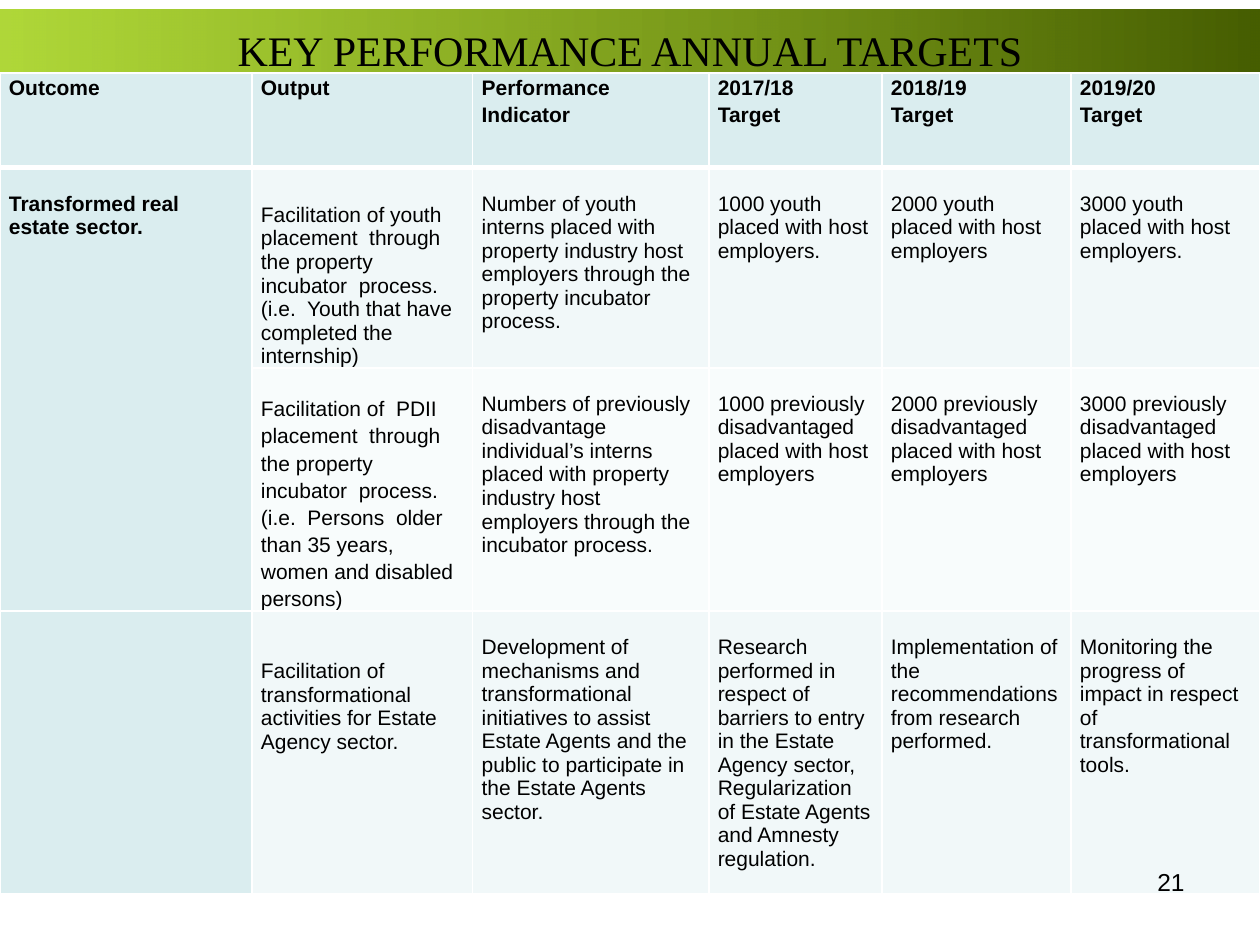
"""Build the slide of key performance annual targets."""
from dataclasses import dataclass

from lxml import etree
from pptx import Presentation
from pptx import util as u
from pptx.dml.color import RGBColor
from pptx.enum import text
from pptx.oxml import ns


@dataclass(frozen=True)
class Theme:
    ink: str = "000000"
    rule: str = "FFFFFF"
    heading: str = "DAEDEF"
    band: str = "F1F8F9"
    plain: str = "F8FCFC"
    banner_start: str = "99CC00"
    banner_end: str = "465E00"
    title_font: str = "Times New Roman"
    body_font: str = "Arial"
    title_size: int = 24
    body_size: int = 12
    number_size: int = 14


THEME = Theme()
COLUMN_WIDTHS = [5.08, 4.45, 4.76, 3.49, 3.81, 3.81]
ROW_HEIGHTS = [1.91, 4.01, 4.9, 5.69]
LINE_GAP = 0.49
HEADINGS = ["Outcome", "Output", "Performance Indicator",
            "2017/18\nTarget", "2018/19\nTarget", "2019/20\nTarget"]
OUTCOME = "Transformed real estate sector."
TARGETS = [
    ["Facilitation of youth placement  through the property  incubator  process."
     "(i.e.  Youth that have completed the internship)",
     "Number of youth interns placed with property industry host employers "
     "through the property incubator process.",
     "1000 youth placed with host employers.",
     "2000 youth placed with host employers",
     "3000 youth placed with host employers."],
    ["Facilitation of  PDII placement  through the property  incubator  process."
     "(i.e.  Persons  older than 35 years, women and disabled persons)",
     "Numbers of previously disadvantage individual’s interns placed with "
     "property industry host employers through the incubator process.",
     "1000 previously disadvantaged placed with host employers",
     "2000 previously disadvantaged placed with host employers",
     "3000 previously disadvantaged placed with host employers"],
    ["Facilitation of transformational activities for Estate Agency sector.",
     "Development of mechanisms and transformational initiatives to assist "
     "Estate Agents and the public to participate in the Estate Agents sector.",
     "Research performed in respect of barriers to entry in the Estate Agency "
     "sector, Regularization of Estate Agents and Amnesty regulation.",
     "Implementation of the recommendations from research performed.",
     "Monitoring the progress of impact in respect of transformational tools."],
]
OUTPUT_GAPS = [0.72, 0.53, 2 * LINE_GAP]
OUTPUT_SPACINGS = [1, 1.15, 1]
ROW_FILLS = [THEME.band, THEME.plain, THEME.band]


def add_run(paragraph, words, font, size, bold=False):
    """Add one styled run to a paragraph."""
    run = paragraph.add_run()
    run.text = words
    run.font.name = font
    run.font.size = u.Pt(size)
    run.font.bold = bold
    run.font.color.rgb = RGBColor.from_string(THEME.ink)


def add_title(slide, words):
    """Place the title on its gradient banner."""
    title = slide.shapes.title
    title.left, title.top = u.Cm(0), u.Cm(0.2)
    title.width, title.height = u.Cm(25.4), u.Cm(1.47)
    title.fill.gradient()
    title.fill.gradient_angle = 0
    colours = (THEME.banner_start, THEME.banner_end)
    for stop, colour in zip(title.fill.gradient_stops, colours):
        stop.color.rgb = RGBColor.from_string(colour)
    start = next(title.element.spPr.iter(ns.qn("a:srgbClr")))
    etree.SubElement(start, ns.qn("a:alpha"), val="78000")
    frame = title.text_frame
    frame.auto_size = text.MSO_AUTO_SIZE.NONE
    frame.vertical_anchor = text.MSO_ANCHOR.MIDDLE
    frame.margin_top = u.Cm(0.25)
    heading = frame.paragraphs[0]
    heading.alignment = text.PP_ALIGN.CENTER
    add_run(heading, words, THEME.title_font, THEME.title_size)


def style_cell(cell, colour, bottom=1):
    """Give a cell its borders and fill."""
    properties = cell._tc.get_or_add_tcPr()
    for side, points in (("L", 1), ("R", 1), ("T", 1), ("B", bottom)):
        border = etree.SubElement(properties, ns.qn(f"a:ln{side}"),
                                  w=str(u.Pt(points)))
        solid = etree.SubElement(border, ns.qn("a:solidFill"))
        etree.SubElement(solid, ns.qn("a:srgbClr"), val=THEME.rule)
    cell.fill.solid()
    cell.fill.fore_color.rgb = RGBColor.from_string(colour)


def write_cell(cell, words, gap=LINE_GAP, spacing=1, bold=False):
    """Write lines into a cell below a top gap."""
    cell.margin_left = cell.margin_right = u.Cm(0.18)
    cell.margin_top, cell.margin_bottom = u.Cm(gap), u.Cm(0)
    frame = cell.text_frame
    for index, line in enumerate(words.split("\n")):
        paragraph = frame.add_paragraph() if index else frame.paragraphs[0]
        paragraph.line_spacing = spacing
        add_run(paragraph, line, THEME.body_font, THEME.body_size, bold)


def add_targets(slide):
    """Add the table of outcomes, outputs and yearly targets."""
    table = slide.shapes.add_table(
        len(ROW_HEIGHTS), len(COLUMN_WIDTHS), u.Cm(0), u.Cm(1.47),
        u.Cm(sum(COLUMN_WIDTHS)), u.Cm(sum(ROW_HEIGHTS))).table
    for column, width in zip(table.columns, COLUMN_WIDTHS):
        column.width = u.Cm(width)
    for row, height in zip(table.rows, ROW_HEIGHTS):
        row.height = u.Cm(height)
    for column, heading in enumerate(HEADINGS):
        cell = table.cell(0, column)
        style_cell(cell, THEME.heading, bottom=3)
        write_cell(cell, heading, gap=0, spacing=1.15, bold=True)
    for row, entries in enumerate(TARGETS, 1):
        style_cell(table.cell(row, 0), THEME.heading)
        for column, entry in enumerate(entries, 1):
            cell = table.cell(row, column)
            style_cell(cell, ROW_FILLS[row - 1])
            if column == 1:
                write_cell(cell, entry, OUTPUT_GAPS[row - 1],
                           OUTPUT_SPACINGS[row - 1])
            else:
                write_cell(cell, entry)
    outcome = table.cell(1, 0)
    outcome.merge(table.cell(2, 0))
    write_cell(outcome, OUTCOME, bold=True)


def add_page_number(slide, number):
    """Add the page number at the lower right."""
    box = slide.shapes.add_textbox(u.Cm(18.2), u.Cm(17.35), u.Cm(5.93), u.Cm(1.32))
    box.text_frame.word_wrap = True
    paragraph = box.text_frame.paragraphs[0]
    paragraph.alignment = text.PP_ALIGN.RIGHT
    add_run(paragraph, number, THEME.body_font, THEME.number_size)


def main():
    """Build and save the slide."""
    deck = Presentation()
    deck.slide_width, deck.slide_height = u.Cm(25.4), u.Cm(19.05)
    slide = deck.slides.add_slide(deck.slide_layouts.get_by_name("Title Only"))
    add_title(slide, "KEY PERFORMANCE ANNUAL TARGETS")
    add_targets(slide)
    add_page_number(slide, "21")
    deck.save("out.pptx")


if __name__ == "__main__":
    main()
